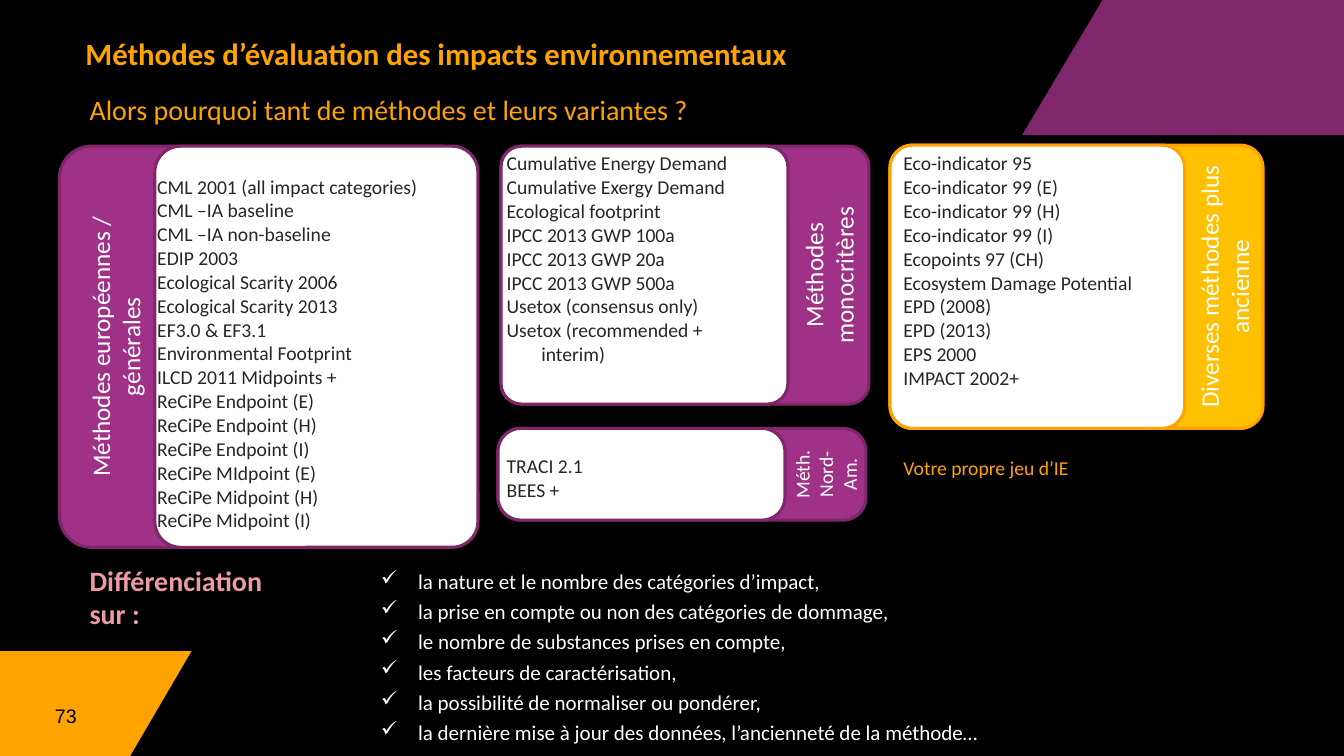
from collections import namedtuple

import pptx
import pptx.dml.color
import pptx.enum.shapes
import pptx.enum.text
import pptx.oxml
import pptx.oxml.ns
import pptx.util

RGBColor = pptx.dml.color.RGBColor
BLACK = RGBColor(0x00, 0x00, 0x00)
WHITE = RGBColor(0xFF, 0xFF, 0xFF)
INK = RGBColor(0x26, 0x26, 0x26)
PLUM = RGBColor(0x80, 0x27, 0x6C)
VIOLET = RGBColor(0x9F, 0x31, 0x87)
ORANGE = RGBColor(0xFF, 0xA3, 0x00)
AMBER = RGBColor(0xFF, 0xC0, 0x00)
PINK = RGBColor(0xEC, 0x9B, 0xA4)

GRID = pptx.util.Inches(0.1)
COLUMNS, ROWS = 133.33, 75
LEFT = pptx.enum.text.PP_ALIGN.LEFT
CENTER = pptx.enum.text.PP_ALIGN.CENTER
RIGHT = pptx.enum.text.PP_ALIGN.RIGHT
TOP = pptx.enum.text.MSO_ANCHOR.TOP
MIDDLE = pptx.enum.text.MSO_ANCHOR.MIDDLE
NO_STYLE = "{2D5ABB26-0587-4C30-8999-92F81FD0307C}"

Box = namedtuple("Box", "left top width height")

EUROPEAN = [
    "CML 2001 (all impact categories)", "CML –IA baseline", "CML –IA non-baseline",
    "EDIP 2003", "Ecological Scarity 2006", "Ecological Scarity 2013",
    "EF3.0 & EF3.1", "Environmental Footprint", "ILCD 2011 Midpoints +",
    "ReCiPe Endpoint (E)", "ReCiPe Endpoint (H)", "ReCiPe Endpoint (I)",
    "ReCiPe MIdpoint (E)", "ReCiPe Midpoint (H)", "ReCiPe Midpoint (I)",
]
SINGLE_CRITERION = [
    "Cumulative Energy Demand", "Cumulative Exergy Demand", "Ecological footprint",
    "IPCC 2013 GWP 100a", "IPCC 2013 GWP 20a", "IPCC 2013 GWP 500a",
    "Usetox (consensus only)", "Usetox (recommended +\v interim)",
    "TRACI 2.1", "BEES +",
]
OLDER = [
    "Eco-indicator 95", "Eco-indicator 99 (E)", "Eco-indicator 99 (H)",
    "Eco-indicator 99 (I)", "Ecopoints 97 (CH)", "Ecosystem Damage Potential",
    "EPD (2008)", "EPD (2013)", "EPS 2000", "IMPACT 2002+", "Votre propre jeu d’IE",
]
DIFFERENCES = [
    "la nature et le nombre des catégories d’impact,",
    "la prise en compte ou non des catégories de dommage,",
    "le nombre de substances prises en compte,",
    "les facteurs de caractérisation,",
    "la possibilité de normaliser ou pondérer,",
    "la dernière mise à jour des données, l’ancienneté de la méthode…",
]


def cells(*lengths):
    """Convert grid lengths to slide units."""
    return [round(length * GRID) for length in lengths]


def indent(para, margin, hanging):
    """Set a hanging indent in grid lengths."""
    margin, hanging = cells(margin, hanging)
    para._p.get_or_add_pPr().set("marL", str(margin))
    para._p.get_or_add_pPr().set("indent", str(-hanging))


def style(para, size, color, bold=False, font="Calibri"):
    """Set the font of a paragraph."""
    para.font.size = pptx.util.Pt(size)
    para.font.color.rgb = color
    para.font.bold = bold
    para.font.name = font


def add_text(page, box, text, size=18, color=WHITE, bold=False, font="Calibri",
             align=LEFT, anchor=TOP, wrap=True, rotation=0, spacing=None):
    """Add a text box with one formatted paragraph."""
    shape = page.shapes.add_textbox(*cells(*box))
    shape.rotation = rotation
    shape.text_frame.word_wrap = wrap
    shape.text_frame.vertical_anchor = anchor
    para = shape.text_frame.paragraphs[0]
    para.text = text
    para.alignment = align
    para.line_spacing = spacing
    style(para, size, color, bold, font)
    return shape


def draw_corner(page, box, color, corners):
    """Draw a filled corner outline from shares of its box."""
    points = [cells(box.left + x * box.width, box.top + y * box.height) for x, y in corners]
    builder = page.shapes.build_freeform(*points[0])
    builder.add_line_segments(points[1:], close=True)
    shape = builder.convert_to_shape()
    shape.shadow.inherit = False
    shape.fill.solid()
    shape.fill.fore_color.rgb = color
    shape.line.fill.background()


def draw_card(page, box, fill, line, radius):
    """Draw one rounded rectangle."""
    kind = pptx.enum.shapes.MSO_SHAPE.ROUNDED_RECTANGLE
    shape = page.shapes.add_shape(kind, *cells(*box))
    shape.adjustments[0] = radius
    shape.shadow.inherit = False
    shape.fill.solid()
    shape.fill.fore_color.rgb = fill
    shape.line.color.rgb = line
    shape.line.width = pptx.util.Pt(2.25)


def draw_panel(page, box, label, body_start=0, body_share=0.78, fill=VIOLET, line=PLUM,
               radius=0.08, size=18, label_share=1, shift=0):
    """Draw a coloured panel, its white body and its vertical label."""
    body = Box(box.left + body_start * box.width, box.top, body_share * box.width, box.height)
    draw_card(page, box, fill, line, radius)
    draw_card(page, body, WHITE, line, radius)
    band_left = box.left if body_start else body.left + body.width
    band_right = body.left if body_start else box.left + box.width
    length, depth = label_share * box.height, band_right - band_left
    middle = (band_left + band_right) / 2 + shift
    label_box = Box(middle - length / 2, box.top + (box.height - depth) / 2, length, depth)
    add_text(page, label_box, label, size=size, align=CENTER, anchor=MIDDLE, rotation=270)


def fill_methods(cell, methods, top=0.5, margin=3, gaps=None, colors=None):
    """Write a list of methods in a transparent table cell."""
    cell.fill.background()
    cell.margin_top = cells(top)[0]
    cell.text_frame.text = "\n".join(methods)
    for method, para in zip(methods, cell.text_frame.paragraphs):
        indent(para, margin, 3)
        if method in (gaps or {}):
            para.space_before = pptx.util.Pt(gaps[method])
        style(para, 14, (colors or {}).get(method, INK))


def draw_methods(page, box):
    """Place the three lists of methods in a table."""
    table = page.shapes.add_table(1, 3, *cells(*box)).table
    table.first_row = table.horz_banding = False
    table._tbl.tblPr.find(pptx.oxml.ns.qn("a:tableStyleId")).text = NO_STYLE
    for column, share in zip(table.columns, (0.333, 0.332, 0.335)):
        column.width = cells(share * box.width)[0]
    fill_methods(table.cell(0, 0), EUROPEAN, top=2.8)
    fill_methods(table.cell(0, 1), SINGLE_CRITERION, gaps={"TRACI 2.1": 63})
    fill_methods(table.cell(0, 2), OLDER, margin=7.8, gaps={OLDER[-1]: 47},
                 colors={OLDER[-1]: ORANGE})


def draw_differences(page, box):
    """Place the heading and the checked list of differences."""
    add_text(page, Box(box.left, box.top, 24.7, 4.3), "Différenciation sur :",
             size=20, color=PINK, bold=True, wrap=False)
    list_box = Box(box.left + 23.9, box.top + 0.5, box.width - 23.9, box.height - 0.5)
    frame = add_text(page, list_box, "\n".join(DIFFERENCES)).text_frame
    frame.text = "\n".join(DIFFERENCES)
    for number, para in enumerate(frame.paragraphs):
        indent(para, 8.7, 3.7)
        if number:
            para.space_before = pptx.util.Pt(3.6)
        properties = para._p.get_or_add_pPr()
        color = pptx.oxml.parse_xml(
            f'<a:buClr {pptx.oxml.ns.nsdecls("a")}><a:srgbClr val="{WHITE}"/></a:buClr>')
        bullet = pptx.oxml.parse_xml(f'<a:buChar {pptx.oxml.ns.nsdecls("a")} char="✓"/>')
        properties.extend([color, bullet])
        style(para, 15, WHITE)


def draw_frame(page):
    """Draw the background, corners, page number and headings."""
    page.background.fill.solid()
    page.background.fill.fore_color.rgb = BLACK
    draw_corner(page, Box(101.4, 0, COLUMNS - 101.4, 13.4), PLUM,
                [(0, 1), (0.25, 0), (1, 0), (1, 1)])
    draw_corner(page, Box(0, 64.6, 19, ROWS - 64.6), ORANGE,
                [(0, 1), (0, 0), (1, 0), (0.68, 1)])
    add_text(page, Box(0, 68, 8.6, 4.7), "73", size=14, color=BLACK, font="Arial",
             align=RIGHT, anchor=pptx.enum.text.MSO_ANCHOR.BOTTOM)
    add_text(page, Box(7.5, 3.4, 100.4, 7.6), "Méthodes d’évaluation des impacts environnementaux",
             size=22, color=ORANGE, bold=True, spacing=0.9)
    add_text(page, Box(7.9, 8.7, 75.5, 4.3), "Alors pourquoi tant de méthodes et leurs variantes ?",
             size=20, color=ORANGE, wrap=False)


def main():
    """Build and save the slide."""
    deck = pptx.Presentation()
    deck.slide_width, deck.slide_height = cells(COLUMNS, ROWS)
    page = deck.slides.add_slide(deck.slide_layouts[6])
    draw_frame(page)
    draw_panel(page, Box(88.3, 14.4, 37, 28.1), "Diverses méthodes plus ancienne",
               body_share=0.79, fill=AMBER, line=ORANGE, label_share=0.95)
    draw_panel(page, Box(49.4, 42.5, 36.5, 9.1), "Méth. Nord-Am.",
               radius=0.25, size=14, label_share=1.04)
    draw_panel(page, Box(5.9, 14.5, 41.1, 39.8), "Méthodes européennes / générales",
               body_start=0.23, body_share=0.78, label_share=0.84, shift=0.8)
    draw_panel(page, Box(49.7, 14.5, 36.5, 25.6), "Méthodes monocritères")
    draw_methods(page, Box(14.6, 14.6, 104.1, 40.6))
    draw_differences(page, Box(7.9, 55.4, 110.2, 19.4))
    deck.save("out.pptx")


if __name__ == "__main__":
    main()
